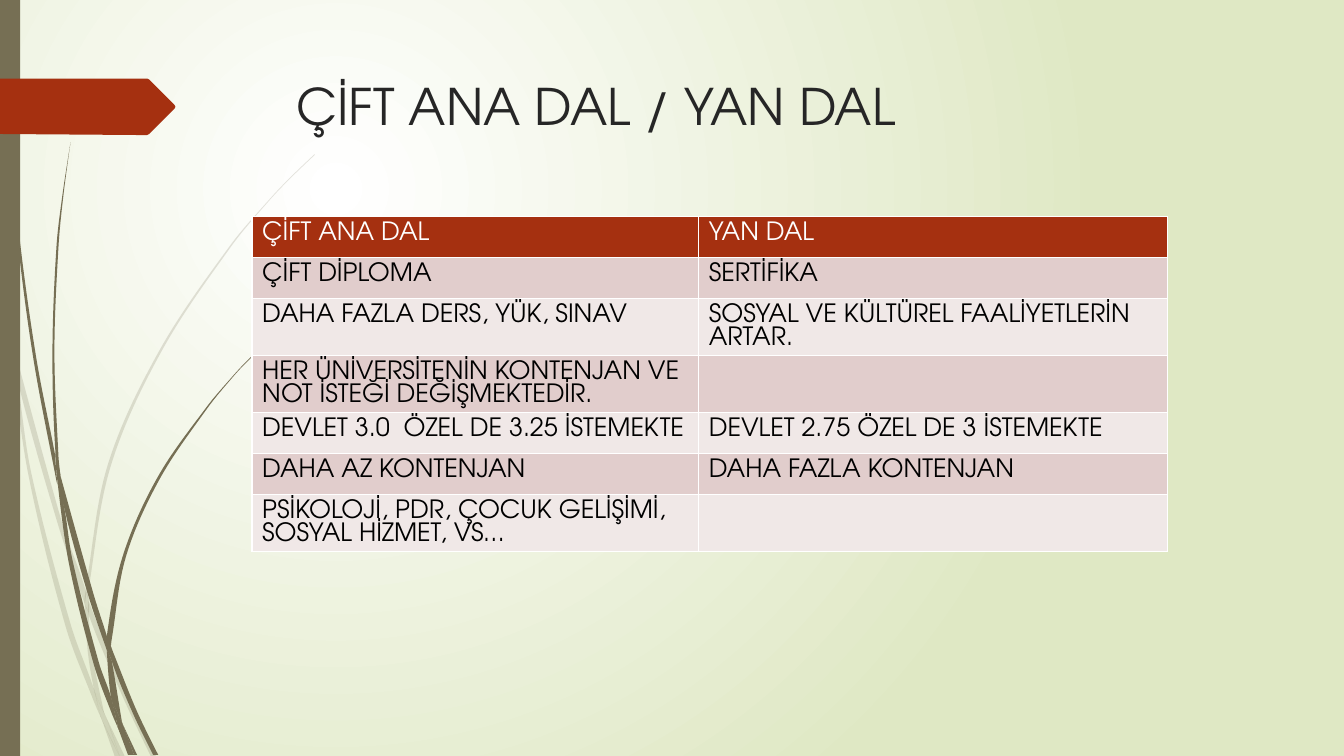
import math

import lxml.etree
import pptx
import pptx.dml.color
import pptx.enum.shapes
import pptx.enum.text
import pptx.oxml.ns
import pptx.util

PX = 9144  # EMU; 100 px to the inch
WIDE, HIGH = 1333, 750
FONT = "TeX Gyre Adventor"
OLIVE, RUST, WHITE = "766F54", "A53010", "FFFFFF"
BACK = [WHITE, "DFE8C4"]
BANDS = ["E1CDCC", "F0E8E7"]

TITLE = "ÇİFT ANA DAL / YAN DAL"
ROWS = [
    ("ÇİFT ANA DAL", "YAN DAL"),
    ("ÇİFT DİPLOMA", "SERTİFİKA"),
    ("DAHA FAZLA DERS, YÜK, SINAV", "SOSYAL VE KÜLTÜREL FAALİYETLERİN ARTAR."),
    ("HER ÜNİVERSİTENİN KONTENJAN VE NOT İSTEĞİ DEĞİŞMEKTEDİR.", ""),
    ("DEVLET 3.0  ÖZEL DE 3.25 İSTEMEKTE", "DEVLET 2.75 ÖZEL DE 3 İSTEMEKTE"),
    ("DAHA AZ KONTENJAN", "DAHA FAZLA KONTENJAN"),
    ("PSİKOLOJİ, PDR, ÇOCUK GELİŞİMİ, SOSYAL HİZMET, VS…", ""),
]
COLS = [443, 465]
TALL = 284

# Outlines of the pieces of grass
PALE = [
    [(11, 350), (9, 322), (0, 282), (0, 299), (10, 344)],
    [(58, 522), (84, 599), (85, 586), (62, 520), (14, 345), (17, 376)],
    [(92, 607), (88, 596), (88, 610), (123, 694), (150, 751), (155, 751), (127, 692)],
    [(119, 751), (124, 751), (105, 711)],
    [(93, 683), (70, 619), (31, 469), (17, 376), (11, 350), (28, 470), (65, 621),
     (92, 693), (101, 714), (99, 707)],
    [(84, 599), (87, 646), (93, 683), (96, 692), (105, 711), (103, 706), (91, 646),
     (88, 610), (88, 608)],
    [(88, 584), (110, 462), (160, 349), (229, 245), (268, 198), (290, 175), (312, 154),
     (312, 153), (289, 175), (268, 197), (228, 244), (158, 348), (107, 461), (85, 584),
     (85, 586), (88, 596)],
    [(101, 714), (114, 751), (119, 751)],
    [(88, 608), (88, 610), (88, 596), (85, 586), (84, 599)],
    [(96, 692), (93, 683), (99, 707), (101, 714), (119, 751), (105, 711)],
]
DARK = [
    [(7, 110), (17, 233), (33, 355), (56, 477), (57, 481), (55, 457), (55, 453),
     (36, 355), (19, 232), (8, 109), (5, 48), (4, 0), (3, 0), (4, 48)],
    [(88, 592), (106, 645), (106, 633), (106, 631), (93, 590), (60, 472), (64, 505)],
    [(113, 649), (110, 641), (111, 656), (132, 708), (152, 749), (157, 749), (136, 706)],
    [(110, 691), (98, 657), (72, 556), (64, 505), (57, 477), (68, 557), (93, 659),
     (111, 708), (117, 722), (116, 717)],
    [(60, 472), (58, 453), (54, 349), (58, 245), (63, 193), (70, 141), (62, 193),
     (56, 245), (52, 349), (55, 449)],
    [(133, 749), (136, 749), (122, 719)],
    [(57, 477), (64, 505), (60, 472), (55, 449), (55, 453)],
    [(111, 633), (125, 552), (158, 476), (205, 406), (231, 374), (245, 359), (261, 344),
     (260, 344), (245, 358), (231, 373), (204, 405), (156, 474), (122, 551), (106, 631),
     (110, 641)],
    [(117, 722), (127, 749), (131, 749)],
    [(106, 645), (110, 691), (116, 706), (122, 719), (121, 716), (111, 656), (109, 651)],
    [(106, 645), (109, 651), (111, 656), (110, 641), (106, 631), (106, 633)],
    [(116, 706), (110, 691), (116, 717), (117, 722), (130, 749), (133, 749), (122, 719)],
]
ARROW = [(173, 108), (148, 133), (146, 134), (136, 134), (0, 133), (0, 78), (136, 78),
         (146, 78), (148, 79), (173, 104), (174, 106)]


def px(*nums):
    return [pptx.util.Emu(round(n * PX)) for n in nums]


def tint(fill, color):
    fill.solid()
    fill.fore_color.rgb = pptx.dml.color.RGBColor.from_string(color)


def name(tag):
    return pptx.oxml.ns.qn(tag)


def node(parent, tag, **attrs):
    return lxml.etree.SubElement(parent, name(tag), attrs)


def paint(shape, color):
    shape.shadow.inherit = False
    tint(shape.fill, color)
    shape.line.fill.background()


def write(frame, text, size, color):
    run = frame.paragraphs[0].add_run()
    run.text = text
    run.font.name = FONT
    run.font.size = pptx.util.Pt(size)
    run.font.bold = False
    tint(run.font.fill, color)


def trace(shapes, dots, color):
    """Draw a closed outline through the dots."""
    first, *rest = [px(*dot) for dot in dots]
    pen = shapes.build_freeform(*first)
    pen.add_line_segments([*rest, first], close=True)
    shape = pen.convert_to_shape()
    paint(shape, color)
    return shape


def lean(a, b, c):
    """Return the unit tangent at b, or zero where b is a sharp corner."""
    turn = math.atan2(c[1] - b[1], c[0] - b[0]) - math.atan2(b[1] - a[1], b[0] - a[0])
    if math.cos(turn) < 0.7:
        return 0, 0
    span = math.dist(a, c)
    return (c[0] - a[0]) / span, (c[1] - a[1]) / span


def bend(shape):
    """Turn the straight sides of an outline into smooth curves."""
    sides = list(shape.element.iter(name("a:lnTo")))
    dots = [(int(pt.get("x")), int(pt.get("y")))
            for pt in shape.element.iter(name("a:pt"))][:-1]
    count = len(dots)
    leans = [lean(dots[i - 1], dots[i], dots[(i + 1) % count]) for i in range(count)]
    for i, side in enumerate(sides):
        j = (i + 1) % count
        reach = math.dist(dots[i], dots[j]) / 3
        arc = node(side.getparent(), "a:cubicBezTo")
        for k, sign in ((i, 1), (j, -1)):
            x, y = (round(p + sign * reach * d) for p, d in zip(dots[k], leans[k]))
            node(arc, "a:pt", x=str(x), y=str(y))
        arc.append(side[0])
        side.getparent().replace(side, arc)


def grow(slide, pieces, alpha=None):
    """Draw one tuft of grass; alpha is in thousandths of a percent."""
    tuft = slide.shapes.add_group_shape()
    for dots in pieces:
        blade = trace(tuft.shapes, dots, OLIVE)
        bend(blade)
        if alpha:
            tone = blade.element.spPr.find(".//" + name("a:srgbClr"))
            node(tone, "a:alpha", val=str(alpha))


def shade(slide):
    fill = slide.background.fill
    fill.gradient()
    for stop, color, place in zip(fill.gradient_stops, BACK, (0, 1)):
        stop.color.rgb = pptx.dml.color.RGBColor.from_string(color)
        stop.position = place
    line = slide.element.find(".//" + name("a:lin"))
    grad = line.getparent()
    grad.remove(line)
    ring = node(grad, "a:path", path="circle")
    node(ring, "a:fillToRect", l="50000", t="50000", r="100000", b="100000")


def edge(cell, fill):
    """Give a cell white borders, then its fill."""
    props = cell._tc.get_or_add_tcPr()
    for side in "LRTB":
        line = node(props, "a:ln" + side, w=str(pptx.util.Pt(1)))
        node(node(line, "a:solidFill"), "a:srgbClr", val=WHITE)
    tint(cell.fill, fill)


def chart(slide):
    """Lay out the comparison table."""
    grid = slide.shapes.add_table(
        len(ROWS), len(COLS), *px(250, 215, sum(COLS), TALL)).table
    for col, wide in zip(grid.columns, COLS):
        col.width = px(wide)[0]
    for r, texts in enumerate(ROWS):
        grid.rows[r].height = px(TALL / len(ROWS))[0]
        for c, text in enumerate(texts):
            cell = grid.cell(r, c)
            edge(cell, BANDS[(r - 1) % 2] if r else RUST)
            if text:
                write(cell.text_frame, text, 18, "000000" if r else WHITE)


def main():
    deck = pptx.Presentation()
    deck.slide_width, deck.slide_height = px(WIDE, HIGH)
    slide = deck.slides.add_slide(deck.slide_layouts[5])
    shade(slide)
    grow(slide, PALE, 20000)
    grow(slide, DARK)
    kinds = pptx.enum.shapes.MSO_SHAPE
    paint(slide.shapes.add_shape(kinds.RECTANGLE, *px(0, 0, 20, HIGH)), OLIVE)
    trace(slide.shapes, ARROW, RUST)

    title = slide.shapes.title
    title.left, title.top, title.width, title.height = px(284, 69, 975, 140)
    frame = title.text_frame
    frame.auto_size = pptx.enum.text.MSO_AUTO_SIZE.NONE
    frame.vertical_anchor = pptx.enum.text.MSO_ANCHOR.TOP
    frame.paragraphs[0].alignment = pptx.enum.text.PP_ALIGN.LEFT
    write(frame, TITLE, 36, "262626")
    chart(slide)
    deck.save("out.pptx")


if __name__ == "__main__":
    main()
